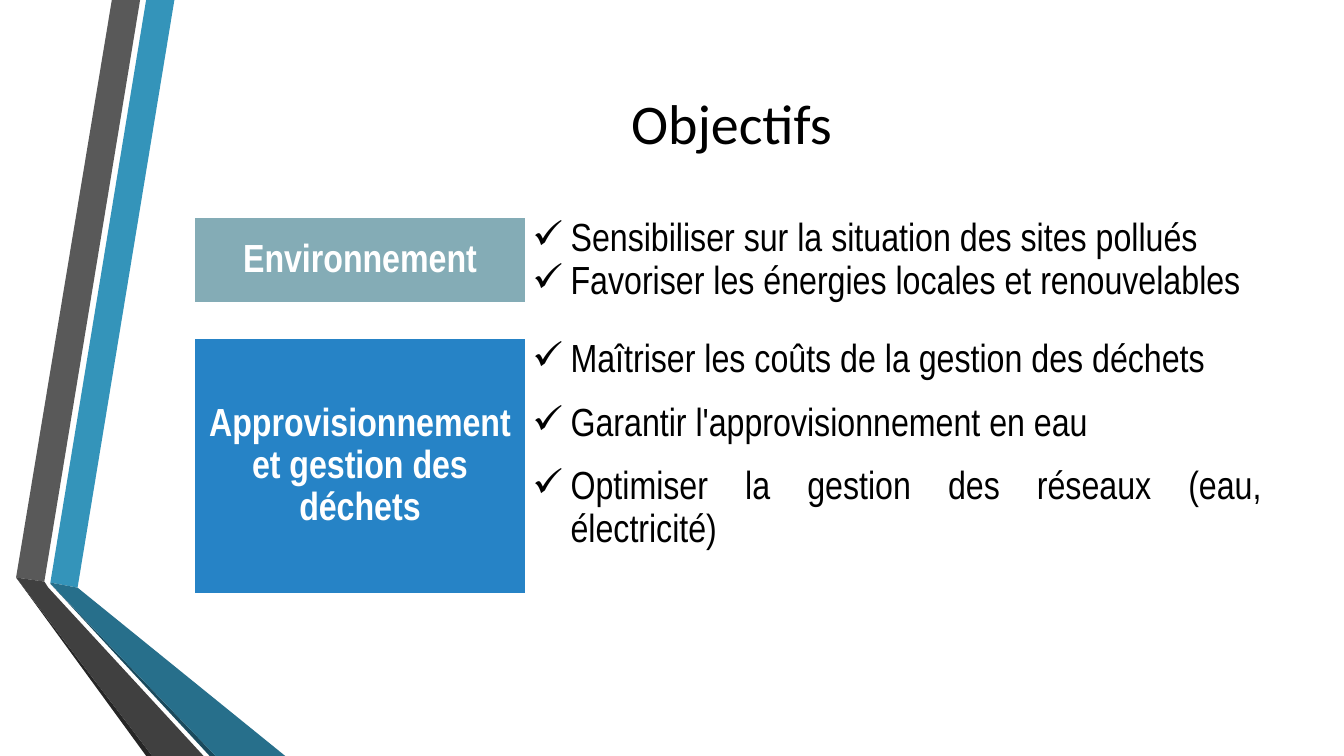
from lxml.etree import SubElement
from pptx import Presentation
from pptx.dml.color import RGBColor
from pptx.enum.text import MSO_ANCHOR, PP_ALIGN
from pptx.oxml.ns import qn
from pptx.util import Inches, Pt

BLACK = RGBColor(0x00, 0x00, 0x00)
WHITE = RGBColor(0xFF, 0xFF, 0xFF)
SAGE = RGBColor(0x84, 0xAC, 0xB6)
BLUE = RGBColor(0x26, 0x83, 0xC6)

TITLE_FONT = "Calibri"
TABLE_FONT = "Arial Narrow"
PLAIN_TABLE_STYLE = "{2D5ABB26-0587-4C30-8999-92F81FD0307C}"
LEFT, WIDTH = 1.93, 10.65
LABEL_WIDTH = 3.28

# Ribbon facets, from back to front: colour and corner points in inches
RIBBON = [
    (RGBColor(0x34, 0x94, 0xBA), [(0.5, 5.78), (0.77, 5.83), (1.73, 0), (1.45, 0)]),
    (RGBColor(0x59, 0x59, 0x59), [(1.39, 0), (1.11, 0), (0.16, 5.73), (0.44, 5.77)]),
    (RGBColor(0x26, 0x26, 0x26), [(0.16, 5.73), (1.45, 7.5), (1.51, 7.5)]),
    (RGBColor(0x1A, 0x4A, 0x5D), [(0.5, 5.79), (2.08, 7.5), (2.14, 7.5)]),
    (RGBColor(0x27, 0x6F, 0x8B),
     [(0.5, 5.79), (2.14, 7.5), (2.83, 7.5), (0.77, 5.83), (0.5, 5.78)]),
    (RGBColor(0x40, 0x40, 0x40),
     [(2.02, 7.5), (0.48, 5.83), (0.44, 5.77), (0.16, 5.73), (1.51, 7.5)]),
]

# Objectives: label, label colour, top, row heights, items
OBJECTIVES = [
    ("Environnement", SAGE, 2.16, [0.42, 0.42],
     ["Sensibiliser sur la situation des sites pollués",
      "Favoriser les énergies locales et renouvelables"]),
    ("Approvisionnement et gestion des déchets", BLUE, 3.36, [0.63, 0.63, 1.26],
     ["Maîtriser les coûts de la gestion des déchets",
      "Garantir l'approvisionnement en eau",
      "Optimiser la gestion des réseaux (eau, électricité)"]),
]


def add_facet(slide, color, points):
    corners = [(Inches(x), Inches(y)) for x, y in points]
    builder = slide.shapes.build_freeform(*corners[0])
    builder.add_line_segments(corners[1:], close=True)
    shape = builder.convert_to_shape()
    shape.shadow.inherit = False
    shape.fill.solid()
    shape.fill.fore_color.rgb = color
    shape.line.fill.background()


def add_run(paragraph, text, font_name, size, color, bold=False):
    run = paragraph.add_run()
    run.text = text
    run.font.name = font_name
    run.font.size = Pt(size)
    run.font.bold = bold
    run.font.color.rgb = color


def add_title(slide, text):
    title = slide.shapes.title
    title.left, title.top = Inches(LEFT), Inches(0.25)
    title.width, title.height = Inches(WIDTH), Inches(1.92)
    title.text_frame.vertical_anchor = MSO_ANCHOR.MIDDLE
    paragraph = title.text_frame.paragraphs[0]
    paragraph.alignment = PP_ALIGN.CENTER
    add_run(paragraph, text, TITLE_FONT, 40, BLACK)


def add_check_bullet(paragraph):
    properties = paragraph._p.get_or_add_pPr()
    properties.set("marL", str(Inches(0.38)))
    properties.set("indent", str(-Inches(0.38)))
    SubElement(properties, qn("a:buChar")).set("char", "✓")


def fill_cell(cell, text, alignment, color, bold=False):
    cell.margin_left = cell.margin_right = Inches(0.07)
    cell.margin_top = cell.margin_bottom = 0
    paragraph = cell.text_frame.paragraphs[0]
    paragraph.alignment = alignment
    paragraph.line_spacing = 1.15
    add_run(paragraph, text, TABLE_FONT, 28, color, bold)
    return paragraph


def add_objective(slide, label, color, top, heights, items):
    frame = slide.shapes.add_table(
        len(items), 2, Inches(LEFT), Inches(top), Inches(WIDTH), Inches(sum(heights)))
    table = frame.table
    table.first_row = table.horz_banding = False
    table._tbl.tblPr.find(qn("a:tableStyleId")).text = PLAIN_TABLE_STYLE
    table.columns[0].width = Inches(LABEL_WIDTH)
    table.columns[1].width = Inches(WIDTH - LABEL_WIDTH)

    # Label cell spanning every row
    label_cell = table.cell(0, 0)
    label_cell.merge(table.cell(len(items) - 1, 0))
    label_cell.vertical_anchor = MSO_ANCHOR.MIDDLE
    label_cell.fill.solid()
    label_cell.fill.fore_color.rgb = color
    fill_cell(label_cell, label, PP_ALIGN.CENTER, WHITE, bold=True)

    # One checked item per row
    for index, (height, item) in enumerate(zip(heights, items)):
        table.rows[index].height = Inches(height)
        cell = table.cell(index, 1)
        cell.fill.background()
        add_check_bullet(fill_cell(cell, item, PP_ALIGN.JUSTIFY, BLACK))


def main():
    presentation = Presentation()
    presentation.slide_width = Inches(13.33)
    presentation.slide_height = Inches(7.5)
    slide = presentation.slides.add_slide(presentation.slide_layouts[5])
    for color, points in RIBBON:
        add_facet(slide, color, points)
    add_title(slide, "Objectifs")
    for objective in OBJECTIVES:
        add_objective(slide, *objective)
    presentation.save("out.pptx")


if __name__ == "__main__":
    main()
